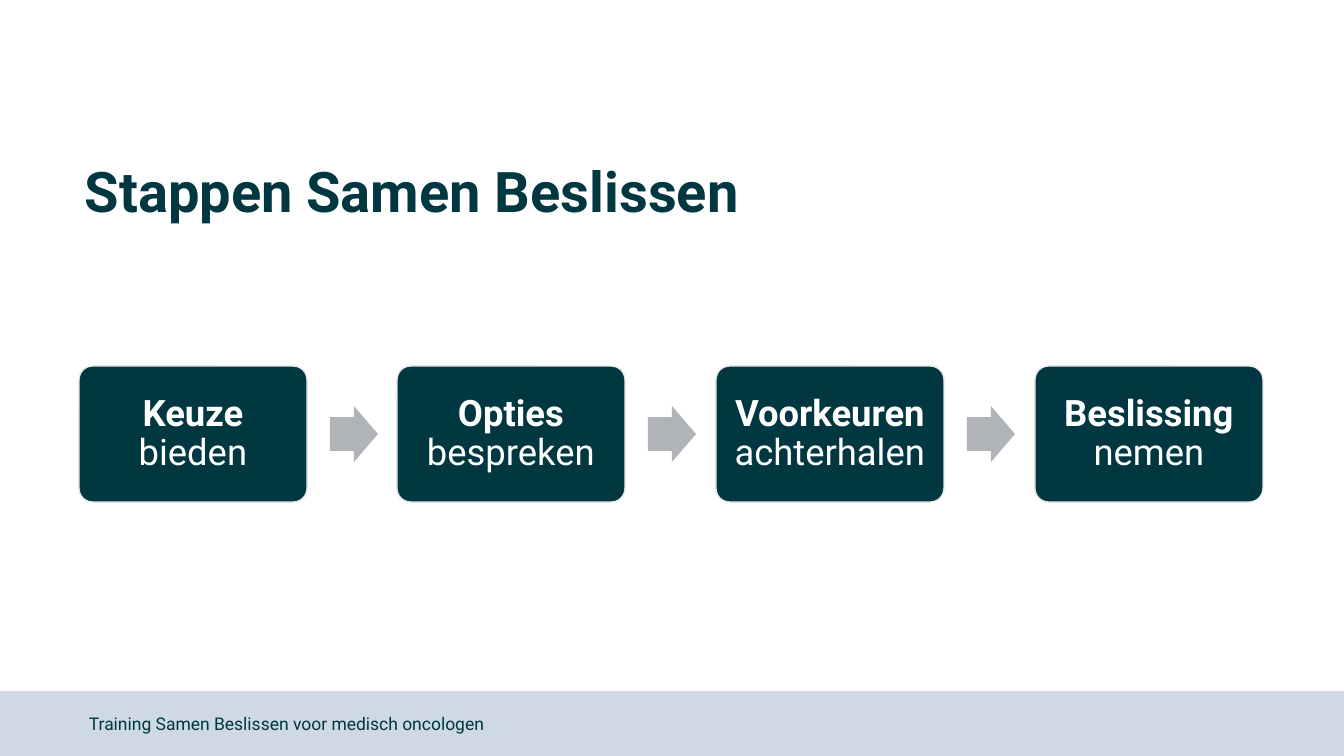
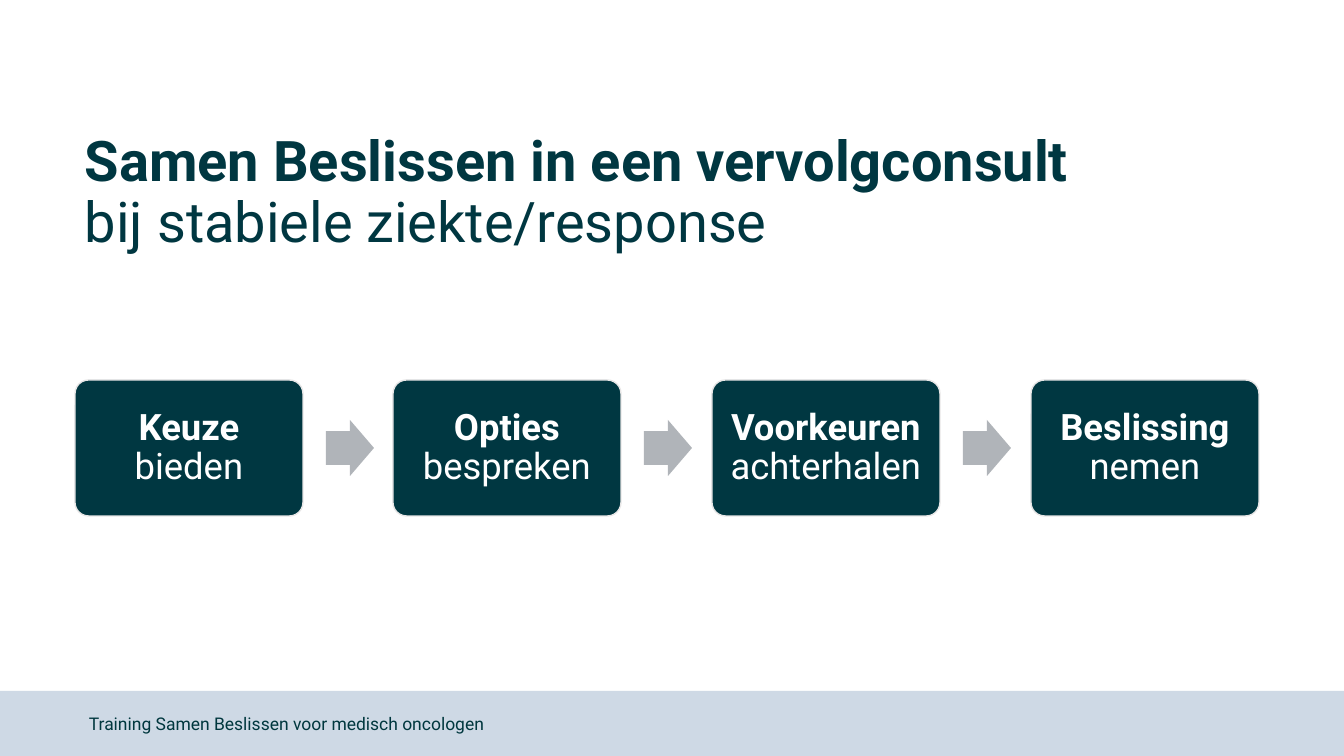
"""Build two slides showing the four steps of shared decision making."""
from pptx import Presentation
from pptx import util as u
from pptx.dml.color import RGBColor
from pptx.enum import shapes, text

PX = 12192000 / 1344
FONT = "Roboto"
TEAL = RGBColor(0x00, 0x37, 0x41)
FOOTER_TEAL = RGBColor(0x00, 0x37, 0x3E)
BAND = RGBColor(0xCE, 0xD9, 0xE5)
ARROW = RGBColor(0xB0, 0xB4, 0xB9)
OUTLINE = RGBColor(0xE7, 0xE6, 0xE6)
WHITE = RGBColor(0xFF, 0xFF, 0xFF)

BOX_W, BOX_H = 228, 136
ARROW_W, ARROW_H = 48, 56
ARROW_DX = 251
STEPS_SPAN = 956

FOOTER = "Training Samen Beslissen voor medisch oncologen"
STEPS = [
    ("Keuze", "bieden"),
    ("Opties", "bespreken"),
    ("Voorkeuren", "achterhalen"),
    ("Beslissing", "nemen"),
]
SLIDES = [
    ("Stappen Samen Beslissen", "", 79, 366),
    ("Samen Beslissen in een vervolgconsult", "bij stabiele ziekte/response", 75, 380),
]


def add_shape(s, kind, x, y, w, h, fill):
    sp = s.shapes.add_shape(kind, *(u.Emu(round(v * PX)) for v in (x, y, w, h)))
    sp.shadow.inherit = False
    sp.fill.solid()
    sp.fill.fore_color.rgb = fill
    sp.line.fill.background()
    return sp


def add_text(s, x, y, w, h, size, color):
    sp = s.shapes.add_textbox(*(u.Emu(round(v * PX)) for v in (x, y, w, h)))
    tf = sp.text_frame
    tf.word_wrap = True
    tf.vertical_anchor = text.MSO_ANCHOR.MIDDLE
    p = tf.paragraphs[0]
    p.font.name, p.font.size, p.font.color.rgb = FONT, u.Pt(size), color
    return p


prs = Presentation()
prs.slide_width, prs.slide_height = u.Emu(round(1344 * PX)), u.Emu(round(756 * PX))

for title, subtitle, left, top in SLIDES:
    s = prs.slides.add_slide(prs.slide_layouts[6])
    add_shape(s, shapes.MSO_SHAPE.RECTANGLE, 0, 691, 1344, 65, BAND)

    p = add_text(s, 75, 121, 1186, 146, 40, TEAL)
    p.line_spacing = 0.9
    r = p.add_run()
    r.text, r.font.bold = title, True
    if subtitle:
        p.add_line_break()
        p.add_run().text = subtitle

    for i, (step, action) in enumerate(STEPS):
        x = left + i * STEPS_SPAN // (len(STEPS) - 1)
        sp = add_shape(s, shapes.MSO_SHAPE.ROUNDED_RECTANGLE, x, top, BOX_W, BOX_H, TEAL)
        sp.adjustments[0] = 0.1
        sp.line.color.rgb = OUTLINE
        sp.line.width = u.Pt(1)
        tf = sp.text_frame
        tf.word_wrap = True
        tf.vertical_anchor = text.MSO_ANCHOR.MIDDLE
        tf.margin_left = tf.margin_right = u.Emu(round(11 * PX))
        tf.margin_top = tf.margin_bottom = u.Emu(round(11 * PX))
        p = tf.paragraphs[0]
        p.alignment = text.PP_ALIGN.CENTER
        p.line_spacing = 0.9
        p.font.name, p.font.size, p.font.color.rgb = FONT, u.Pt(26), WHITE
        r = p.add_run()
        r.text, r.font.bold = step + " ", True
        p.add_run().text = action

        if i < len(STEPS) - 1:
            sp = add_shape(s, shapes.MSO_SHAPE.RIGHT_ARROW, x + ARROW_DX,
                           top + (BOX_H - ARROW_H) // 2, ARROW_W, ARROW_H, ARROW)
            sp.adjustments[0] = 0.6
            sp.adjustments[1] = 0.5

    p = add_text(s, 79, 704, 596, 40, 12.5, FOOTER_TEAL)
    p.add_run().text = FOOTER

prs.save("out.pptx")
